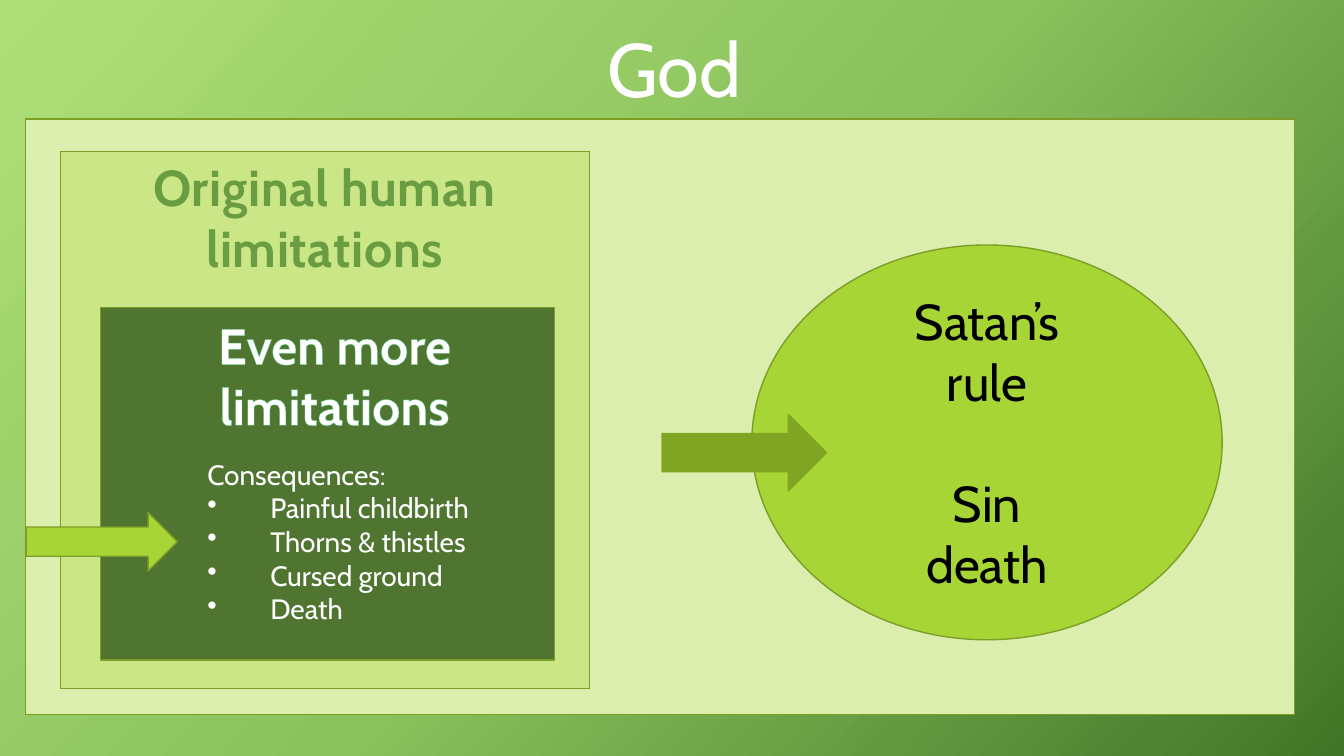
from copy import deepcopy

from lxml import etree
from pptx import Presentation
from pptx.dml.color import RGBColor
from pptx.enum.shapes import MSO_SHAPE
from pptx.enum.text import MSO_ANCHOR, MSO_AUTO_SIZE, PP_ALIGN
from pptx.oxml.ns import qn
from pptx.util import Pt

RECTANGLE, OVAL, ARROW = MSO_SHAPE.RECTANGLE, MSO_SHAPE.OVAL, MSO_SHAPE.RIGHT_ARROW
LEFT, CENTER = PP_ALIGN.LEFT, PP_ALIGN.CENTER
TOP, NO_AUTOFIT = MSO_ANCHOR.TOP, MSO_AUTO_SIZE.NONE

FONT = "Cabin"
OLIVE, LIME, WHITE, BLACK = "7C9E27", "A7D535", "FFFFFF", "000000"
BACKGROUND_STOPS = [(0, "AFDE77"), (0.5, "8BC25D"), (1, "437528")]
CONSEQUENCES = ["Painful childbirth", "Thorns & thistles", "Cursed ground", "Death"]
BULLET_INDENT = Pt(45)


def color(hex_value):
    return RGBColor.from_string(hex_value)


def inside(box, dx, dy, width, height):
    """Return a box offset from the top left corner of another one."""
    return box[0] + dx, box[1] + dy, width, height


def paint_background(slide):
    fill = slide.background.fill
    fill.gradient()
    fill.gradient_angle = 360 - 42
    stop_list = slide.element.find(".//" + qn("a:gsLst"))
    stop_list.append(deepcopy(stop_list[-1]))
    for stop, (position, hex_value) in zip(fill.gradient_stops, BACKGROUND_STOPS):
        stop.position = position
        stop.color.rgb = color(hex_value)


def add_filled(slide, kind, box, fill, line=OLIVE):
    shape = slide.shapes.add_shape(kind, *map(Pt, box))
    shape.shadow.inherit = False
    shape.fill.solid()
    shape.fill.fore_color.rgb = color(fill)
    shape.line.color.rgb = color(line)
    shape.line.width = Pt(1)


def write(frame, lines, size, hex_value, align=CENTER, bold=False):
    for name, value in {"word_wrap": True, "auto_size": NO_AUTOFIT,
                        "vertical_anchor": TOP}.items():
        setattr(frame, name, value)
    for index, line in enumerate(lines):
        paragraph = frame.paragraphs[0] if index == 0 else frame.add_paragraph()
        paragraph.alignment = align
        run = paragraph.add_run()
        run.text = line
        for name, value in {"name": FONT, "size": Pt(size), "bold": bold}.items():
            setattr(run.font, name, value)
        run.font.color.rgb = color(hex_value)


def add_text(slide, box, lines, *style, **options):
    frame = slide.shapes.add_textbox(*map(Pt, box)).text_frame
    write(frame, lines, *style, **options)
    return frame.paragraphs


def add_bullet(paragraph):
    properties = paragraph._p.get_or_add_pPr()
    properties.set("marL", str(BULLET_INDENT))
    properties.set("indent", str(-BULLET_INDENT))
    etree.SubElement(properties, qn("a:buChar")).set("char", "•")


def outline_text(run, hex_value, width):
    line = etree.Element(qn("a:ln"), w=str(Pt(width)))
    fill = etree.SubElement(line, qn("a:solidFill"))
    etree.SubElement(fill, qn("a:srgbClr"), val=hex_value)
    run.font._element.insert(0, line)


def place_title(slide, box):
    title = slide.shapes.title
    title.left, title.top, title.width, title.height = map(Pt, box)
    write(title.text_frame, ["God"], 54, WHITE)


def add_original_limitations(slide, box):
    add_filled(slide, RECTANGLE, box, "CAE686")
    heading = add_text(slide, inside(box, 0, 0, box[2], 94.5),
                       ["Original human", "limitations"], 36, "6A9C41", bold=True)
    for paragraph in heading:
        paragraph.runs[0].font._element.set("spc", "50")


def add_more_limitations(slide, box):
    add_filled(slide, RECTANGLE, box, "507531")
    heading = add_text(slide, inside(box, 69, 1.5, 196, 94.5),
                       ["Even more", "limitations"], 36, WHITE, bold=True)
    for paragraph in heading:
        outline_text(paragraph.runs[0], "54D289", 0.8)
    consequences = add_text(slide, inside(box, 69, 103.5, 235, 150.5),
                            ["Consequences:"] + CONSEQUENCES, 20, WHITE, align=LEFT)
    for paragraph in consequences[1:]:
        add_bullet(paragraph)


def add_satans_rule(slide, box):
    add_filled(slide, OVAL, box, LIME)
    _, sin, _ = add_text(slide, inside(box, 96, 29, 144, 225.5),
                         ["Satan’s rule", "Sin", "death"], 36, BLACK)
    sin.space_before = Pt(43.5)


def add_world(slide, box):
    add_filled(slide, RECTANGLE, box, "DCEEAE")
    add_original_limitations(slide, inside(box, 25, 23, 378, 384))
    add_more_limitations(slide, inside(box, 54, 134.5, 324, 252))
    add_satans_rule(slide, inside(box, 519, 90, 336, 282))
    add_filled(slide, ARROW, inside(box, 0.7, 281, 108, 41.8), LIME)
    add_filled(slide, ARROW, inside(box, 455, 211, 117.4, 54.7), "80A522", "80A522")


def main():
    deck = Presentation()
    deck.slide_width, deck.slide_height = Pt(960), Pt(540)
    slide = deck.slides.add_slide(deck.slide_layouts[5])
    paint_background(slide)
    place_title(slide, (386, 12, 191, 73))
    add_world(slide, (18, 85, 906.5, 425.5))
    deck.save("out.pptx")


if __name__ == "__main__":
    main()
